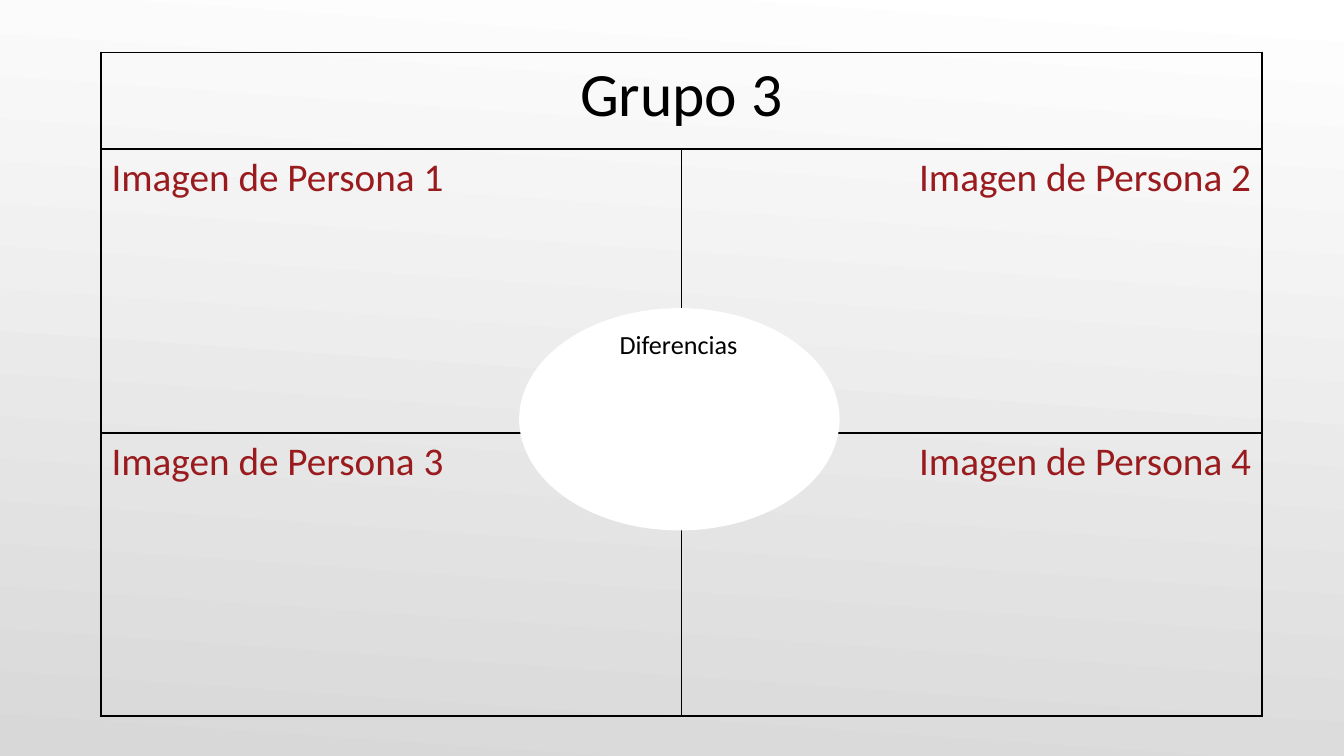
from lxml import etree
from pptx import Presentation
from pptx.dml.color import RGBColor
from pptx.enum import shapes, text
from pptx.oxml import ns
from pptx.util import Inches, Pt

BLACK = RGBColor(0x00, 0x00, 0x00)
WHITE = RGBColor(0xFF, 0xFF, 0xFF)
GRAY = RGBColor(0xD8, 0xD8, 0xD8)
RED = RGBColor(0x99, 0x1B, 0x1E)
FONT = "Calibri"
LEFT, TOP = 0.75, 0.39
COLUMN_WIDTH = 4.32
ROW_HEIGHTS = (0.72, 2.11, 2.11)
ALIGNMENTS = (text.PP_ALIGN.LEFT, text.PP_ALIGN.RIGHT)


def paint_background(slide):
    """Shade the slide from white at the top to gray at the bottom."""
    fill = slide.background.fill
    fill.gradient()
    fill.gradient_angle = 266
    for stop, color, position in zip(fill.gradient_stops, (WHITE, GRAY), (0, 1)):
        stop.color.rgb = color
        stop.position = position


def write(frame, words, size, color, alignment=text.PP_ALIGN.LEFT):
    """Write one formatted paragraph in a text frame."""
    paragraph = frame.paragraphs[0]
    paragraph.text = words
    paragraph.alignment = alignment
    paragraph.font.name = FONT
    paragraph.font.size = Pt(size)
    paragraph.font.color.rgb = color


def outline_cell(cell):
    """Give a cell thin black borders and no fill."""
    properties = cell._tc.get_or_add_tcPr()
    for side in ("a:lnL", "a:lnR", "a:lnT", "a:lnB"):
        border = etree.SubElement(properties, ns.qn(side), w=str(Pt(1)))
        fill = etree.SubElement(border, ns.qn("a:solidFill"))
        etree.SubElement(fill, ns.qn("a:srgbClr"), val=str(BLACK))
    cell.fill.background()
    cell.margin_left = cell.margin_right = Inches(0.08)
    cell.margin_top = cell.margin_bottom = Inches(0.04)


def add_group_table(slide, group):
    """Add the group heading above a two by two grid of people."""
    table = slide.shapes.add_table(
        len(ROW_HEIGHTS), 2, Inches(LEFT), Inches(TOP),
        Inches(2 * COLUMN_WIDTH), Inches(sum(ROW_HEIGHTS))).table
    table.first_row = table.horz_banding = False
    for row, height in zip(table.rows, ROW_HEIGHTS):
        row.height = Inches(height)
    for cell in table.iter_cells():
        outline_cell(cell)
    heading = table.cell(0, 0)
    heading.merge(table.cell(0, 1))
    write(heading.text_frame, group, 33, BLACK, text.PP_ALIGN.CENTER)
    for index in range(4):
        row, column = divmod(index, 2)
        write(table.cell(row + 1, column).text_frame,
              f"Imagen de Persona {index + 1}", 21, RED, ALIGNMENTS[column])


def add_differences(slide):
    """Add the labelled white oval where the four cells meet."""
    oval = slide.shapes.add_shape(
        shapes.MSO_SHAPE.OVAL, Inches(3.87), Inches(2.3), Inches(2.37), Inches(1.64))
    oval.shadow.inherit = False
    oval.fill.solid()
    oval.fill.fore_color.rgb = WHITE
    oval.line.color.rgb = WHITE
    oval.line.width = Pt(1)
    frame = slide.shapes.add_textbox(
        Inches(4.54), Inches(2.4), Inches(1.16), Inches(0.3)).text_frame
    frame.word_wrap = True
    frame.margin_left = frame.margin_right = Inches(0.07)
    frame.margin_top = frame.margin_bottom = Inches(0.04)
    write(frame, "Diferencias", 14, BLACK)


def main():
    """Build and save the group comparison slide."""
    deck = Presentation()
    deck.slide_width = Inches(10)
    deck.slide_height = deck.slide_width * 9 // 16
    slide = deck.slides.add_slide(deck.slide_layouts[6])
    paint_background(slide)
    add_group_table(slide, "Grupo 3")
    add_differences(slide)
    deck.save("out.pptx")


if __name__ == "__main__":
    main()
